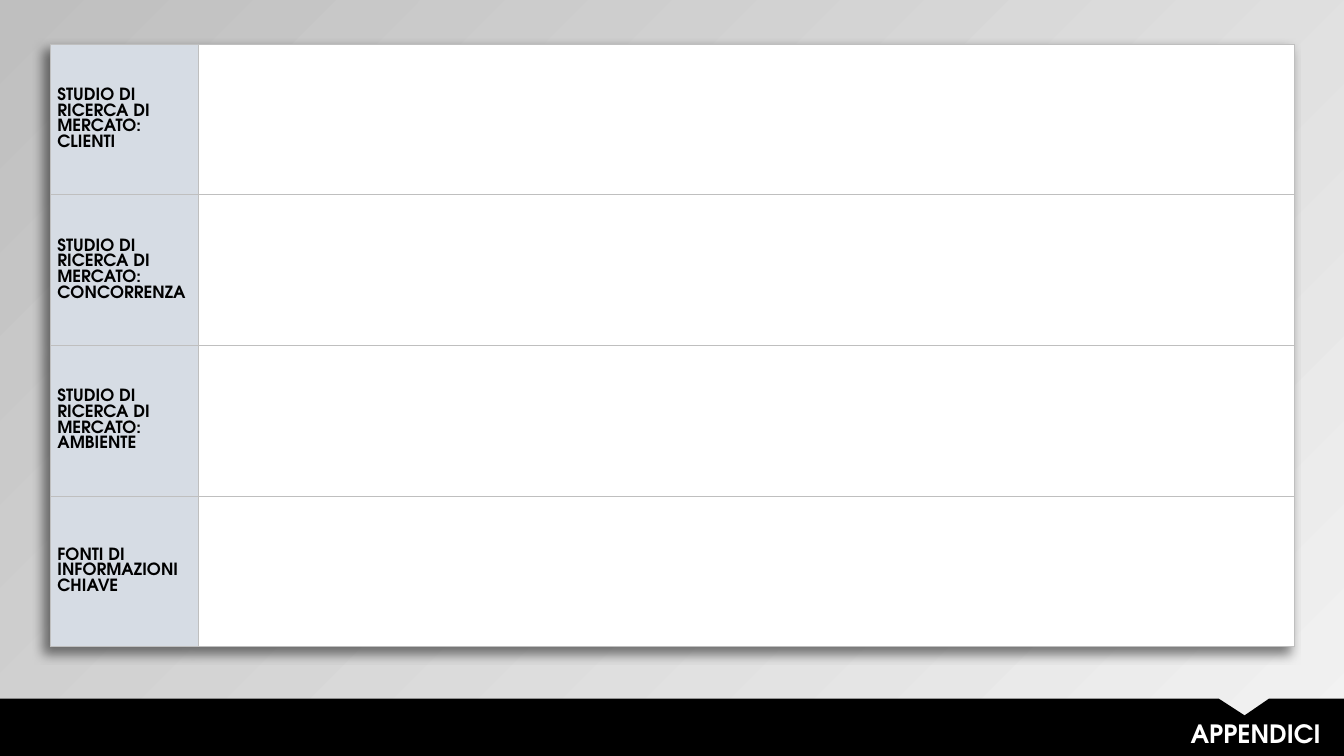
from lxml import etree
from pptx import Presentation
from pptx.dml.color import RGBColor
from pptx.enum.text import MSO_ANCHOR, PP_ALIGN
from pptx.oxml import parse_xml
from pptx.util import Pt

MIDDLE = MSO_ANCHOR.MIDDLE
RIGHT = PP_ALIGN.RIGHT
NAMESPACE = "http://schemas.openxmlformats.org/drawingml/2006/main"
FONT = "TeX Gyre Adventor"
WIDTH, HEIGHT = 960, 540
LABEL_WIDTH = 105.84
TOPICS = [
    "STUDIO DI RICERCA DI MERCATO:\nCLIENTI",
    "STUDIO DI RICERCA DI MERCATO: CONCORRENZA",
    "STUDIO DI RICERCA DI MERCATO: AMBIENTE",
    "FONTI DI INFORMAZIONI CHIAVE",
]


def color(value):
    """Turn a hex string into a colour."""
    return RGBColor.from_string(value)


def style_text(text_frame, size, value, line_spacing=None):
    """Format every run of a text frame in the bold slide font."""
    for paragraph in text_frame.paragraphs:
        paragraph.line_spacing = line_spacing
        for run in paragraph.runs:
            run.font.name = FONT
            run.font.size = Pt(size)
            run.font.bold = True
            run.font.color.rgb = color(value)


def add_borders(cell, value, width):
    """Draw thin lines on the four sides of a cell."""
    properties = cell._tc.get_or_add_tcPr()
    for index, side in enumerate(("lnL", "lnR", "lnT", "lnB")):
        properties.insert(index, parse_xml(
            f'<a:{side} xmlns:a="{NAMESPACE}" w="{Pt(width)}"><a:solidFill>'
            f'<a:srgbClr val="{value}"/></a:solidFill></a:{side}>'))


def add_table_shadow(table):
    """Cast a soft shadow down and to the left of a table."""
    properties = table._tbl.tblPr
    effects = parse_xml(
        f'<a:effectLst xmlns:a="{NAMESPACE}"><a:outerShdw blurRad="{Pt(8)}" '
        f'dist="{Pt(6)}" dir="8100000" algn="tr" rotWithShape="0">'
        '<a:srgbClr val="000000"><a:alpha val="50000"/></a:srgbClr>'
        '</a:outerShdw></a:effectLst>')
    for style in properties.findall(etree.QName(NAMESPACE, "tableStyleId").text):
        properties.remove(style)
    properties.append(effects)


def add_background(slide):
    """Fill the slide with a grey diagonal gradient."""
    fill = slide.background.fill
    fill.gradient()
    fill.gradient_angle = 135
    for stop, position, value in zip(fill.gradient_stops, (0, 1), ("F2F2F2", "BFBFBF")):
        stop.position = position
        stop.color.rgb = color(value)


def add_topics(slide, left, top, width, height):
    """Place the table of topics with an empty field beside each one."""
    frame = slide.shapes.add_table(
        len(TOPICS), 2, Pt(left), Pt(top), Pt(width), Pt(height))
    table = frame.table
    table.first_row = table.horz_banding = False
    add_table_shadow(table)
    table.columns[0].width = Pt(LABEL_WIDTH)
    table.columns[1].width = Pt(width - LABEL_WIDTH)
    for row, topic in zip(table.rows, TOPICS):
        row.height = Pt(height / len(TOPICS))
        for cell, value, text in zip(row.cells, ("D6DCE4", "FFFFFF"), (topic, "")):
            cell.fill.solid()
            cell.fill.fore_color.rgb = color(value)
            cell.vertical_anchor = MIDDLE
            cell.margin_left = cell.margin_right = Pt(5)
            cell.margin_top = cell.margin_bottom = 0
            cell.text_frame.text = text
            style_text(cell.text_frame, 12, "000000")
            add_borders(cell, "BFBFBF", 0.5)


def add_footer(slide, left, top, width, height):
    """Place the notched black band with the section title."""
    right, bottom = left + width, top + height
    points = [(right - 89.5, top), (right - 71, top + 12), (right - 53.5, top),
              (right, top), (right, bottom), (left, bottom)]
    builder = slide.shapes.build_freeform(Pt(left), Pt(top))
    builder.add_line_segments([(Pt(x), Pt(y)) for x, y in points])
    band = builder.convert_to_shape()
    band.shadow.inherit = False
    band.fill.solid()
    band.fill.fore_color.rgb = color("000000")
    band.line.fill.background()

    title = slide.shapes.add_textbox(
        Pt(right - 662), Pt(top + 10.8), Pt(652.4), Pt(28.8))
    title.text_frame.word_wrap = True
    title.text_frame.text = "APPENDICI"
    title.text_frame.paragraphs[0].alignment = RIGHT
    style_text(title.text_frame, 18, "FFFFFF")


def main():
    """Build the appendix slide and save it."""
    presentation = Presentation()
    presentation.slide_width, presentation.slide_height = Pt(WIDTH), Pt(HEIGHT)
    slide = presentation.slides.add_slide(presentation.slide_layouts[6])
    add_background(slide)
    add_topics(slide, 36, 31.5, 888.5, 430.4)
    add_footer(slide, 0, 499, WIDTH, 41)
    presentation.save("out.pptx")


if __name__ == "__main__":
    main()
